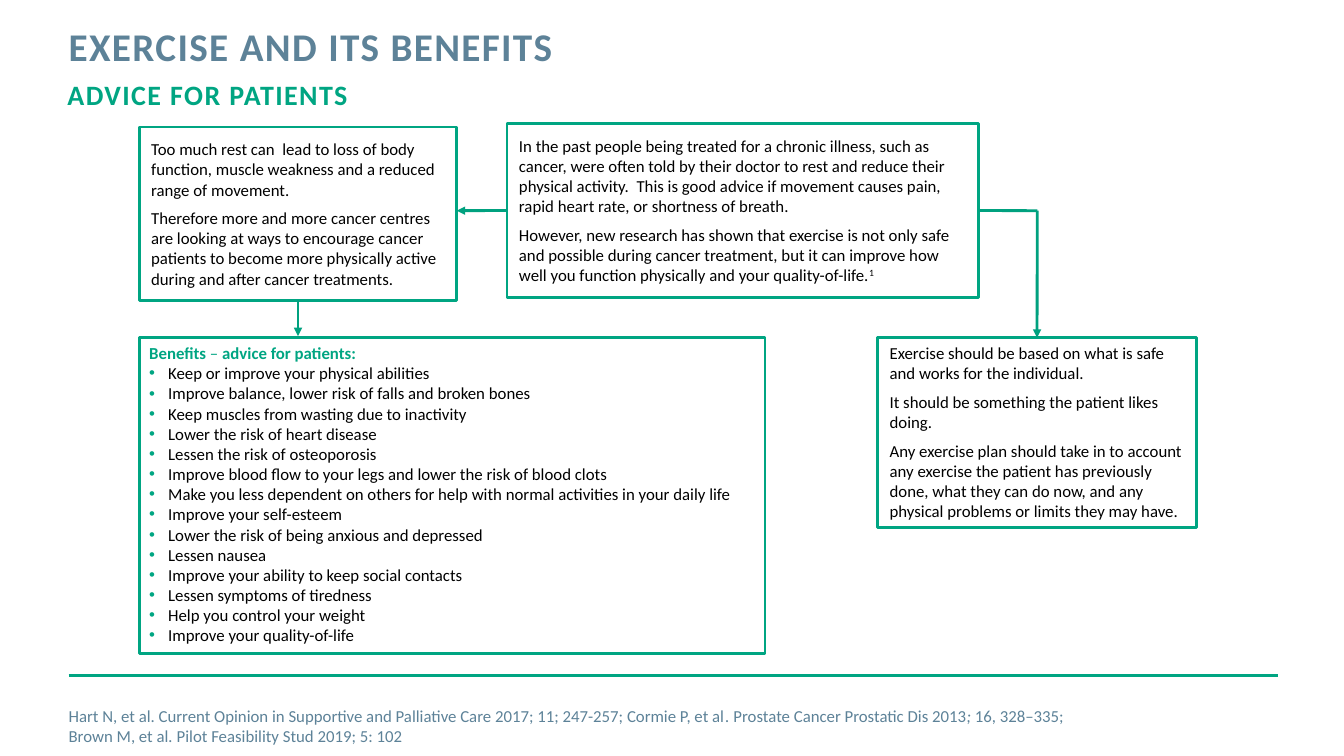
from dataclasses import dataclass

from lxml import etree
from pptx import Presentation
from pptx.dml.color import RGBColor
from pptx.enum.shapes import MSO_CONNECTOR, MSO_SHAPE
from pptx.enum.text import MSO_ANCHOR, PP_ALIGN
from pptx.oxml.ns import qn
from pptx.util import Cm, Pt

RECT = MSO_SHAPE.RECTANGLE
STRAIGHT = MSO_CONNECTOR.STRAIGHT
TOP, MIDDLE = MSO_ANCHOR.TOP, MSO_ANCHOR.MIDDLE
LEFT = PP_ALIGN.LEFT
UP_SIDE, LEFT_SIDE, LOW_SIDE, RIGHT_SIDE = range(4)


@dataclass(frozen=True)
class Theme:
    font: str = "Calibri"
    green: str = "00A582"
    arrow: str = "00A17F"
    slate: str = "5D8298"
    black: str = "000000"
    white: str = "FFFFFF"
    head: int = 28
    sub: int = 20
    body: int = 12
    line: int = 2


def color(value):
    return RGBColor.from_string(value)


class Board:
    def __init__(self, slide, theme):
        self.slide = slide
        self.theme = theme

    def fill(self, para, runs, size, tint, bold=None, track=0):
        para.alignment = LEFT
        font = para.font
        font.name, font.size, font.bold = self.theme.font, Pt(size), bold
        font.color.rgb = color(tint)
        for text, style in [(runs, "")] if isinstance(runs, str) else runs:
            run = para.add_run()
            run.text = text
            if style == "bold":
                run.font.bold = True
            elif style == "italic":
                run.font.italic = True
            elif style == "super":
                run._r.get_or_add_rPr().set("baseline", "30000")
            if track:
                run._r.get_or_add_rPr().set("spc", str(track))

    def frame(self, shape, anchor, pads):
        frame = shape.text_frame
        frame.word_wrap = True
        frame.vertical_anchor = anchor
        (frame.margin_left, frame.margin_top,
         frame.margin_right, frame.margin_bottom) = map(Cm, pads)
        return frame

    def title(self, text, left, top, width, height):
        shape = self.slide.shapes.title
        shape.left, shape.top = Cm(left), Cm(top)
        shape.width, shape.height = Cm(width), Cm(height)
        para = self.frame(shape, TOP, (0, 0, 0, 0)).paragraphs[0]
        para.line_spacing = Pt(30)
        self.fill(para, text, self.theme.head, self.theme.slate, True, 100)

    def label(self, runs, left, top, width, height, size, tint,
              anchor=TOP, bold=None, track=0):
        shape = self.slide.shapes.add_textbox(
            Cm(left), Cm(top), Cm(width), Cm(height))
        para = self.frame(shape, anchor, (0, 0, 0, 0)).paragraphs[0]
        self.fill(para, runs, size, tint, bold, track)

    def box(self, left, top, width, height, anchor=MIDDLE, inset=0.3):
        shape = self.slide.shapes.add_shape(
            RECT, Cm(left), Cm(top), Cm(width), Cm(height))
        shape.shadow.inherit = False
        shape.fill.solid()
        shape.fill.fore_color.rgb = color(self.theme.white)
        shape.line.color.rgb = color(self.theme.green)
        shape.line.width = Pt(self.theme.line)
        self.frame(shape, anchor, (inset, 0.13, 0.25, 0.13))
        return shape

    def prose(self, shape, paras):
        frame = shape.text_frame
        for i, runs in enumerate(paras):
            para = frame.add_paragraph() if i else frame.paragraphs[0]
            if i < len(paras) - 1:
                para.space_after = Pt(6)
            self.fill(para, runs, self.theme.body, self.theme.black)

    def bullets(self, shape, head, items):
        frame = shape.text_frame
        self.fill(frame.paragraphs[0], head, self.theme.body, self.theme.green)
        for item in items:
            para = frame.add_paragraph()
            props = para._p.get_or_add_pPr()
            props.set("marL", str(Cm(0.48)))
            props.set("indent", str(-Cm(0.48)))
            tint = etree.SubElement(props, qn("a:buClr"))
            etree.SubElement(tint, qn("a:srgbClr")).set("val", self.theme.green)
            etree.SubElement(props, qn("a:buFont")).set("typeface", "Arial")
            etree.SubElement(props, qn("a:buChar")).set("char", "•")
            self.fill(para, item, self.theme.body, self.theme.black)

    def link(self, start, end, tint, source=None, target=None, head=False):
        line = self.slide.shapes.add_connector(
            STRAIGHT, *map(Cm, start), *map(Cm, end))
        if source:
            line.begin_connect(*source)
        if target:
            line.end_connect(*target)
        line.line.color.rgb = color(tint)
        line.line.width = Pt(self.theme.line)
        if head:
            etree.SubElement(line.line._get_or_add_ln(),
                             qn("a:tailEnd")).set("type", "triangle")
        etree.SubElement(line._element.spPr, qn("a:effectLst"))


REST = [
    "Too much rest can  lead to loss of body function, muscle weakness and a "
    "reduced range of movement.",
    "Therefore more and more cancer centres are looking at ways to encourage "
    "cancer patients to become more physically active during and after cancer "
    "treatments.",
]
PAST = [
    "In the past people being treated for a chronic illness, such as cancer, "
    "were often told by their doctor to rest and reduce their physical "
    "activity.  This is good advice if movement causes pain, rapid heart rate, "
    "or shortness of breath.",
    [("However, new research has shown that exercise is not only safe and "
      "possible during cancer treatment, but it can improve how well you "
      "function physically and your quality-of-life.", ""), ("1", "super")],
]
PLAN = [
    "Exercise should be based on what is safe and works for the individual.",
    "It should be something the patient likes doing.",
    "Any exercise plan should take in to account any exercise the patient has "
    "previously done, what they can do now, and any physical problems or "
    "limits they may have.",
]
GAINS = [
    "Keep or improve your physical abilities",
    "Improve balance, lower risk of falls and broken bones",
    "Keep muscles from wasting due to inactivity",
    "Lower the risk of heart disease",
    "Lessen the risk of osteoporosis",
    "Improve blood flow to your legs and lower the risk of blood clots",
    "Make you less dependent on others for help with normal activities in your "
    "daily life",
    "Improve your self-esteem",
    "Lower the risk of being anxious and depressed",
    "Lessen nausea",
    "Improve your ability to keep social contacts",
    "Lessen symptoms of tiredness",
    "Help you control your weight",
    "Improve your quality-of-life",
]
SOURCES = [
    ("Hart N, et al. Current Opinion in Supportive and Palliative Care 2017; "
     "11; 247-257; Cormie P, et al", ""), (". ", "italic"),
    ("Prostate Cancer Prostatic Dis 2013", ""), ("; ", "italic"),
    ("16, 328–335; Brown M, et al", ""), (".", "italic"),
    (" Pilot Feasibility Stud 2019; 5: 102", ""),
]


def main():
    deck = Presentation()
    deck.slide_width, deck.slide_height = Cm(33.87), Cm(19.05)
    theme = Theme()
    board = Board(deck.slides.add_slide(deck.slide_layouts[5]), theme)

    board.title("EXERCISE AND ITS BENEFITS", 1.73, 0.69, 24.28, 2.24)
    board.label("ADVICE FOR PATIENTS", 1.7, 1.96, 30.48, 1.96,
                theme.sub, theme.green, bold=True, track=100)
    board.link((1.73, 17.02), (32.21, 17.02), theme.green)
    board.label(SOURCES, 1.73, 17.78, 25.55, 1.02,
                theme.body, theme.slate, MIDDLE)

    rest = board.box(3.51, 3.2, 8, 4.37)
    past = board.box(12.78, 3.12, 11.89, 4.37)
    gains = board.box(3.51, 8.51, 15.77, 7.95, TOP, 0.25)
    plan = board.box(22.12, 8.51, 8.03, 4.78, TOP)
    board.prose(rest, REST)
    board.prose(past, PAST)
    board.prose(plan, PLAN)
    board.bullets(gains, [("Benefits", "bold"), (" –", ""),
                          (" advice for patients:", "bold")], GAINS)

    axis, turn = 5.31, 26.14
    board.link((12.78, axis), (11.51, axis), theme.arrow,
               source=(past, LEFT_SIDE), head=True)
    board.link((7.51, 7.57), (7.51, 8.47), theme.arrow,
               source=(rest, LOW_SIDE), head=True)
    board.link((24.67, axis), (turn, axis), theme.arrow,
               source=(past, RIGHT_SIDE))
    board.link((turn, axis), (turn, 8.51), theme.arrow,
               target=(plan, UP_SIDE), head=True)
    deck.save("out.pptx")


if __name__ == "__main__":
    main()
